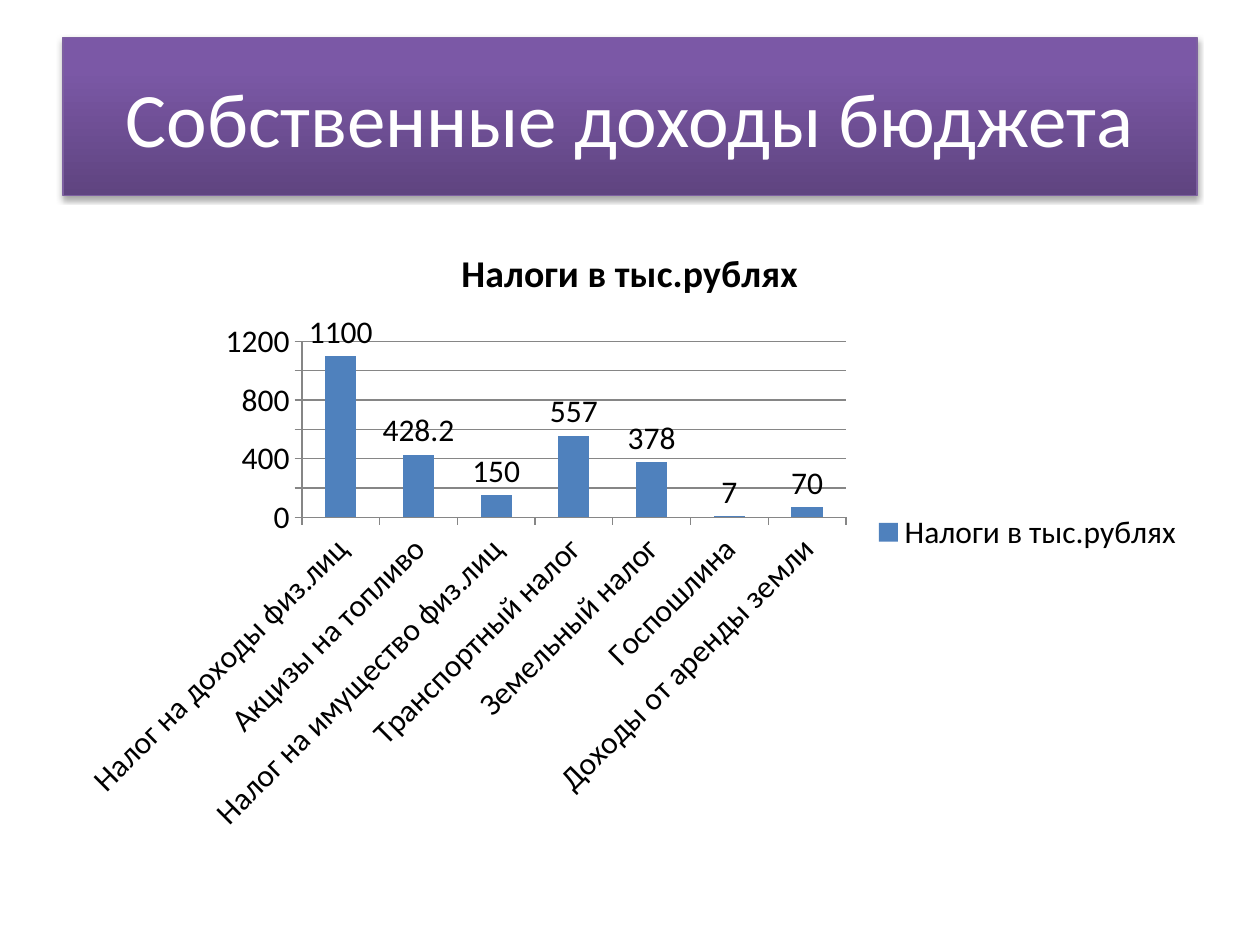
from dataclasses import dataclass
from typing import NamedTuple

from lxml import etree
from pptx import Presentation
from pptx.chart import data as chart_data
from pptx.dml.color import RGBColor
from pptx.enum import chart as charts, text
from pptx.oxml import ns
from pptx.util import Inches, Pt


class Stop(NamedTuple):
    percent: int
    color: str


class Tax(NamedTuple):
    name: str
    amount: float


@dataclass(frozen=True)
class Theme:
    font: str = "Calibri"
    white: str = "FFFFFF"
    black: str = "000000"
    border: str = "7D60A0"
    bar: str = "4F81BD"
    axis: str = "868686"
    title_size: float = 44
    chart_title_size: float = 21.6
    chart_size: float = 18
    banner: tuple[Stop, ...] = (
        Stop(0, "5F4480"), Stop(80, "7B58A6"), Stop(100, "7C57A8"))


THEME = Theme()
SERIES_NAME = "Налоги в тыс.рублях"
TAXES = (
    Tax("Налог на доходы физ.лиц", 1100),
    Tax("Акцизы на топливо", 428.2),
    Tax("Налог на имущество физ.лиц", 150),
    Tax("Транспортный налог", 557),
    Tax("Земельный налог", 378),
    Tax("Госпошлина", 7),
    Tax("Доходы от аренды земли", 70),
)


def format_font(font, *, size: float, color: str, bold: bool = False) -> None:
    font.name = THEME.font
    font.size = Pt(size)
    font.bold = bold
    font.color.rgb = RGBColor.from_string(color)


def write_text(frame, content: str, *, size: float, color: str,
               bold: bool = False) -> None:
    paragraph = frame.paragraphs[0]
    paragraph.alignment = text.PP_ALIGN.CENTER
    run = paragraph.add_run()
    run.text = content
    format_font(run.font, size=size, color=color, bold=bold)


def format_line(line, color: str) -> None:
    line.color.rgb = RGBColor.from_string(color)
    line.width = Pt(0.75)


def add_child(parent, tag: str, **attributes):
    return etree.SubElement(parent, ns.qn(tag), attributes)


def fill_gradient(shape, stops: tuple[Stop, ...]) -> None:
    shape.fill.gradient()
    shape.fill.gradient_angle = 90
    stop_list = shape.element.spPr.find(".//" + ns.qn("a:gsLst"))
    for child in list(stop_list):
        stop_list.remove(child)
    for stop in stops:
        element = add_child(stop_list, "a:gs", pos=str(stop.percent * 1000))
        add_child(element, "a:srgbClr", val=stop.color)


def add_shadow(shape) -> None:
    shape.shadow.inherit = False
    effects = shape.element.spPr.find(ns.qn("a:effectLst"))
    shadow = add_child(effects, "a:outerShdw", blurRad=str(Pt(3.1)),
                       dist=str(Pt(1.8)), dir="5400000", rotWithShape="0")
    color = add_child(shadow, "a:srgbClr", val=THEME.black)
    add_child(color, "a:alpha", val="35000")


def draw_title(slide, content: str) -> None:
    title = slide.shapes.title
    title.left, title.top = Inches(0.5), Inches(0.3)
    title.width, title.height = Inches(9), Inches(1.25)
    fill_gradient(title, THEME.banner)
    format_line(title.line, THEME.border)
    add_shadow(title)
    title.text_frame.vertical_anchor = text.MSO_ANCHOR.MIDDLE
    write_text(title.text_frame, content, size=THEME.title_size, color=THEME.white)


def draw_chart(slide, taxes: tuple[Tax, ...]) -> None:
    values = chart_data.CategoryChartData()
    values.categories = [tax.name for tax in taxes]
    values.add_series(SERIES_NAME, [tax.amount for tax in taxes])
    chart = slide.shapes.add_chart(
        charts.XL_CHART_TYPE.COLUMN_CLUSTERED,
        Inches(0.5), Inches(1.75), Inches(9), Inches(4.95), values).chart
    format_font(chart.font, size=THEME.chart_size, color=THEME.black)

    chart.has_title = True
    write_text(chart.chart_title.text_frame, SERIES_NAME,
               size=THEME.chart_title_size, color=THEME.black, bold=True)
    chart.chart_title.include_in_layout = False
    chart.has_legend = True
    chart.legend.position = charts.XL_LEGEND_POSITION.RIGHT
    chart.legend.include_in_layout = False

    for axis in (chart.category_axis, chart.value_axis):
        axis.major_tick_mark = charts.XL_TICK_MARK.OUTSIDE
        axis.minor_tick_mark = charts.XL_TICK_MARK.NONE
        format_line(axis.format.line, THEME.axis)
    chart.value_axis.has_major_gridlines = True
    format_line(chart.value_axis.major_gridlines.format.line, THEME.axis)

    plot = chart.plots[0]
    plot.gap_width = 150
    plot.vary_by_categories = False
    fill = plot.series[0].format.fill
    fill.solid()
    fill.fore_color.rgb = RGBColor.from_string(THEME.bar)
    plot.has_data_labels = True
    plot.data_labels.show_value = True
    plot.data_labels.position = charts.XL_LABEL_POSITION.OUTSIDE_END


def main() -> None:
    presentation = Presentation()
    presentation.slide_width = Inches(10)
    presentation.slide_height = Inches(7.5)
    slide = presentation.slides.add_slide(presentation.slide_layouts[5])
    draw_title(slide, "Собственные доходы бюджета")
    draw_chart(slide, TAXES)
    presentation.save("out.pptx")


if __name__ == "__main__":
    main()
